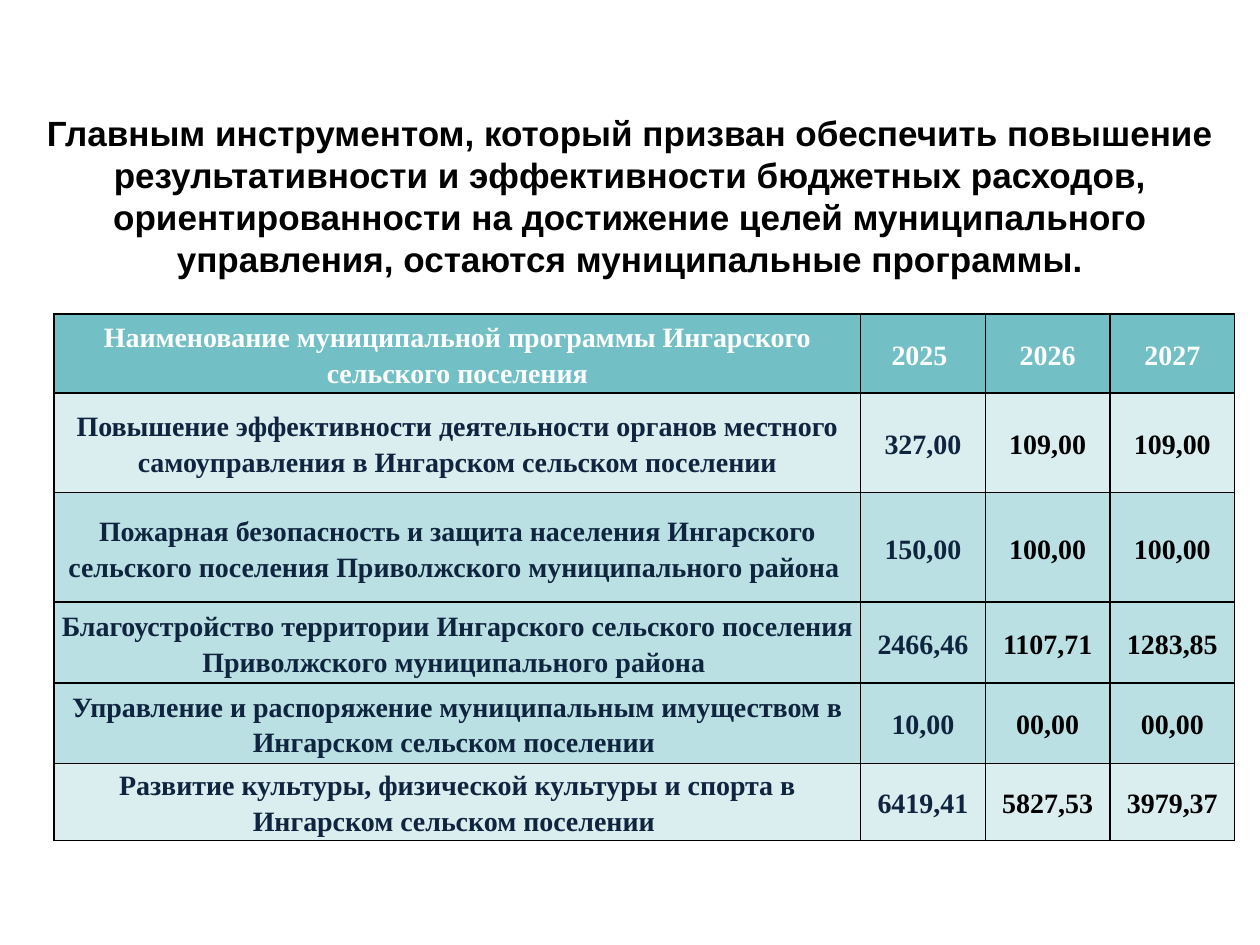
import pptx
import pptx.dml.color
import pptx.enum.text
import pptx.oxml
import pptx.oxml.ns
import pptx.util
from pptx.util import Inches

COLORS = {
    "black": "000000",
    "white": "FFFFFF",
    "navy": "0F243E",
    "header": "72BFC5",
    "light": "DAEDEF",
    "medium": "BBE0E3",
}
HEADING = (
    "Главным инструментом, который призван обеспечить повышение "
    "результативности и эффективности бюджетных расходов, ориентированности "
    "на достижение целей муниципального управления, остаются муниципальные программы."
)
COLUMN_WIDTHS = [6.4, 0.99, 0.99, 0.99]
# Row height, fill, cell texts
PROGRAMS = [
    (0.63, "header", ["Наименование муниципальной программы Ингарского сельского поселения",
                      "2025 ", "2026", "2027"]),
    (0.79, "light", ["Повышение эффективности деятельности органов местного "
                     "самоуправления в Ингарском сельском поселении",
                     "327,00", "109,00", "109,00"]),
    (0.87, "medium", ["Пожарная безопасность и защита населения Ингарского сельского "
                      "поселения Приволжского муниципального района ",
                      "150,00", "100,00", "100,00"]),
    (0.64, "medium", ["Благоустройство территории Ингарского сельского поселения "
                      "Приволжского муниципального района ",
                      "2466,46", "1107,71", "1283,85"]),
    (0.64, "medium", ["Управление и распоряжение муниципальным имуществом в "
                      "Ингарском сельском поселении ",
                      "10,00", "00,00", "00,00"]),
    (0.55, "light", ["Развитие культуры, физической культуры и спорта в "
                     "Ингарском сельском поселении ",
                     "6419,41", "5827,53", "3979,37"]),
]
CELL_FORMAT = {
    "margin_left": Inches(0.05),
    "margin_right": Inches(0.05),
    "margin_top": 0,
    "margin_bottom": 0,
    "vertical_anchor": pptx.enum.text.MSO_ANCHOR.MIDDLE,
}
CELL_PARAGRAPH = {"line_spacing": 1.15, "space_after": pptx.util.Pt(10)}


def rgb(color):
    return pptx.dml.color.RGBColor.from_string(COLORS[color])


def apply(target, values):
    for name, value in values.items():
        setattr(target, name, value)


def write_centered(frame, text, font_name, size, color):
    paragraph = frame.paragraphs[0]
    paragraph.alignment = pptx.enum.text.PP_ALIGN.CENTER
    run = paragraph.add_run()
    run.text = text
    apply(run.font, {"name": font_name, "size": pptx.util.Pt(size), "bold": True})
    run.font.color.rgb = rgb(color)
    return paragraph


def add_borders(cell):
    properties = cell._tc.get_or_add_tcPr()
    for position, side in enumerate(("lnL", "lnR", "lnT", "lnB")):
        border = pptx.oxml.parse_xml(
            f'<a:{side} {pptx.oxml.ns.nsdecls("a")} w="{pptx.util.Pt(1)}">'
            f'<a:solidFill><a:srgbClr val="{COLORS["black"]}"/></a:solidFill></a:{side}>'
        )
        properties.insert(position, border)


def add_heading(slide, left, top, width, height):
    heading = slide.shapes.add_textbox(*map(Inches, (left, top, width, height)))
    apply(heading.text_frame, {
        "word_wrap": True,
        "vertical_anchor": pptx.enum.text.MSO_ANCHOR.BOTTOM,
    })
    write_centered(heading.text_frame, HEADING, "Arial", 20, "black")


def text_color(row, column):
    if row == 0:
        return "white"
    return "navy" if column < 2 else "black"


def add_program_table(slide, left, top, width, height):
    programs = slide.shapes.add_table(
        len(PROGRAMS), len(COLUMN_WIDTHS), *map(Inches, (left, top, width, height))
    ).table
    for column, column_width in zip(programs.columns, COLUMN_WIDTHS):
        column.width = Inches(column_width)
    for row, (row_height, fill, texts) in enumerate(PROGRAMS):
        programs.rows[row].height = Inches(row_height)
        for column, text in enumerate(texts):
            cell = programs.cell(row, column)
            apply(cell, CELL_FORMAT)
            cell.fill.solid()
            cell.fill.fore_color.rgb = rgb(fill)
            add_borders(cell)
            paragraph = write_centered(cell.text_frame, text, "Times New Roman", 16,
                                       text_color(row, column))
            apply(paragraph, CELL_PARAGRAPH)


def main():
    presentation = pptx.Presentation()
    apply(presentation, {"slide_width": Inches(10), "slide_height": Inches(7.5)})
    slide = presentation.slides.add_slide(presentation.slide_layouts[6])
    add_heading(slide, 0, 0.42, 10, 1.85)
    add_program_table(slide, 0.43, 2.49, sum(COLUMN_WIDTHS), sum(row[0] for row in PROGRAMS))
    presentation.save("out.pptx")


if __name__ == "__main__":
    main()
